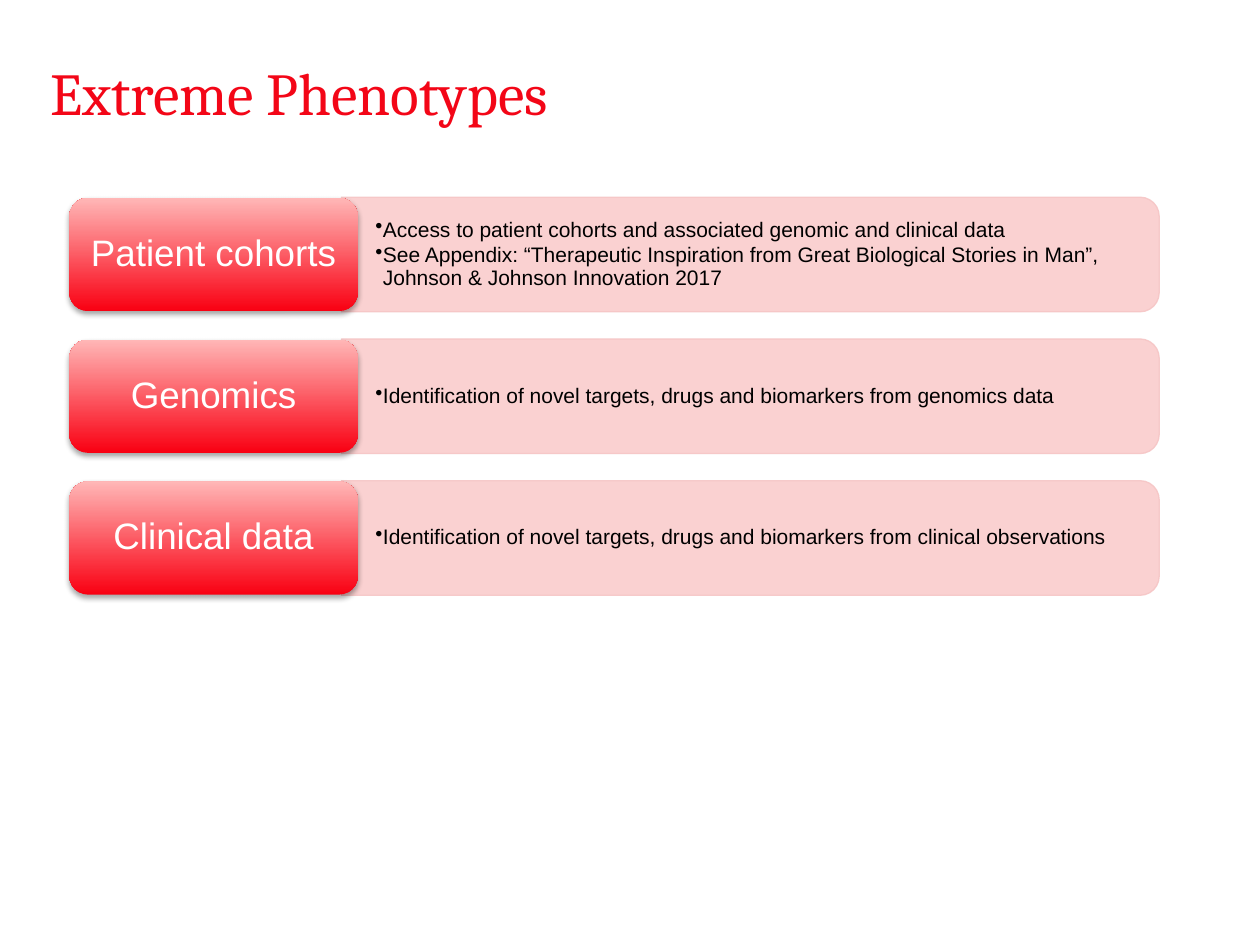
"""Build the Extreme Phenotypes slide with three labelled bands."""
import pptx
import pptx.util
import pptx.dml.color
import pptx.enum.shapes
import pptx.enum.text
import pptx.oxml
import pptx.oxml.ns

TITLE = "Extreme Phenotypes"
ROWS = [
    ("Patient cohorts", [
        "Access to patient cohorts and associated genomic and clinical data",
        "See Appendix: “Therapeutic Inspiration from Great Biological Stories in Man”, "
        "Johnson & Johnson Innovation 2017",
    ]),
    ("Genomics", ["Identification of novel targets, drugs and biomarkers from genomics data"]),
    ("Clinical data", ["Identification of novel targets, drugs and biomarkers from clinical observations"]),
]
COLORS = {
    "title": "F30617", "band": "FACCCC", "band_line": "F6C6C6", "label_bottom": "F90012",
    "label_top": "FFB7B7", "label_text": "FFFFFF", "body": "000000", "shadow": "000000",
}
LEFT, TOP, PITCH = 0.55, 1.57, 1.125
LABEL_WIDTH, ROW_HEIGHT = 2.29, 0.9
BAND_LEFT, BAND_WIDTH, BAND_HEIGHT = 2.71, 6.49, 0.91
BODY_WIDTH, BODY_HEIGHT = 6.46, 0.82
INDENT = 0.06

Inches, Pt = pptx.util.Inches, pptx.util.Pt
Shape = pptx.enum.shapes.MSO_SHAPE
Align = pptx.enum.text.PP_ALIGN


def rgb(name):
    """Return the named colour."""
    return pptx.dml.color.RGBColor.from_string(COLORS[name])


def xml(markup):
    """Parse a drawing element."""
    return pptx.oxml.parse_xml(markup.replace(" ", f" {pptx.oxml.ns.nsdecls('a')} ", 1))


def write_text(shape, lines, *, size, color, font="Arial", align=Align.LEFT,
               margins=(0, 0), spacing=None, after=0, bullet=False):
    """Fill a shape with formatted, vertically centred paragraphs."""
    frame = shape.text_frame
    frame.word_wrap = True
    frame.auto_size = pptx.enum.text.MSO_AUTO_SIZE.NONE
    frame.vertical_anchor = pptx.enum.text.MSO_ANCHOR.MIDDLE
    frame.margin_left = frame.margin_right = Inches(margins[0])
    frame.margin_top = frame.margin_bottom = Inches(margins[1])
    for index, line in enumerate(lines):
        paragraph = frame.add_paragraph() if index else frame.paragraphs[0]
        paragraph.alignment = align
        paragraph.line_spacing = spacing
        paragraph.space_after = Pt(after)
        if bullet:
            properties = paragraph._p.get_or_add_pPr()
            properties.set("marL", str(Inches(INDENT)))
            properties.set("indent", str(-Inches(INDENT)))
            properties.append(xml('<a:buChar char="•"/>'))
        run = paragraph.add_run()
        run.text = line
        run.font.name = font
        run.font.size = Pt(size)
        run.font.color.rgb = rgb(color)


def add_band(slide, top):
    """Add the pale band, a two-corner rectangle turned to the right."""
    left = BAND_LEFT + (BAND_WIDTH - BAND_HEIGHT) / 2
    band_top = top + (ROW_HEIGHT - BAND_WIDTH) / 2
    band = slide.shapes.add_shape(Shape.ROUND_2_SAME_RECTANGLE, Inches(left), Inches(band_top),
                                  Inches(BAND_HEIGHT), Inches(BAND_WIDTH))
    band.rotation = 90
    band.shadow.inherit = False
    band.fill.solid()
    band.fill.fore_color.rgb = rgb("band")
    band.line.color.rgb = rgb("band_line")
    band.line.width = Pt(0.75)
    for color in band._element.spPr.iter(pptx.oxml.ns.qn("a:srgbClr")):
        color.append(xml('<a:alpha val="90000"/>'))


def add_label(slide, text, top):
    """Add the red gradient label with its soft shadow."""
    label = slide.shapes.add_shape(Shape.ROUNDED_RECTANGLE, Inches(LEFT), Inches(top),
                                   Inches(LABEL_WIDTH), Inches(ROW_HEIGHT))
    label.fill.gradient()
    label.fill.gradient_angle = 90
    for stop, position, color in zip(label.fill.gradient_stops, (0, 1), ("label_bottom", "label_top")):
        stop.position = position
        stop.color.rgb = rgb(color)
    label.line.fill.background()
    label.shadow.inherit = False
    effects = label._element.spPr.find(pptx.oxml.ns.qn("a:effectLst"))
    effects.append(xml(
        f'<a:outerShdw blurRad="{Pt(3.1)}" dist="{Pt(1.8)}" dir="5400000" rotWithShape="0">'
        f'<a:srgbClr val="{COLORS["shadow"]}"><a:alpha val="35000"/></a:srgbClr></a:outerShdw>'))
    write_text(label, [text], size=21, color="label_text", align=Align.CENTER,
               margins=(0.09, 0.04), spacing=0.9)


def main():
    """Create and save the presentation."""
    presentation = pptx.Presentation()
    presentation.slide_width, presentation.slide_height = Inches(10), Inches(7.5)
    slide = presentation.slides.add_slide(presentation.slide_layouts[5])
    title = slide.shapes.title
    title.left, title.top, title.width, title.height = map(Inches, (0.4, 0.42, 9, 0.62))
    write_text(title, [TITLE], size=34, color="title", font="Cambria")
    for row, (label, points) in enumerate(ROWS):
        top = TOP + row * PITCH
        add_band(slide, top)
        body = slide.shapes.add_textbox(Inches(BAND_LEFT), Inches(top + (ROW_HEIGHT - BODY_HEIGHT) / 2),
                                        Inches(BODY_WIDTH), Inches(BODY_HEIGHT))
        write_text(body, points, size=12, color="body", margins=(0.27, 0.14),
                   spacing=0.9, after=1.8, bullet=True)
        add_label(slide, label, top)
    presentation.save("out.pptx")


if __name__ == "__main__":
    main()
